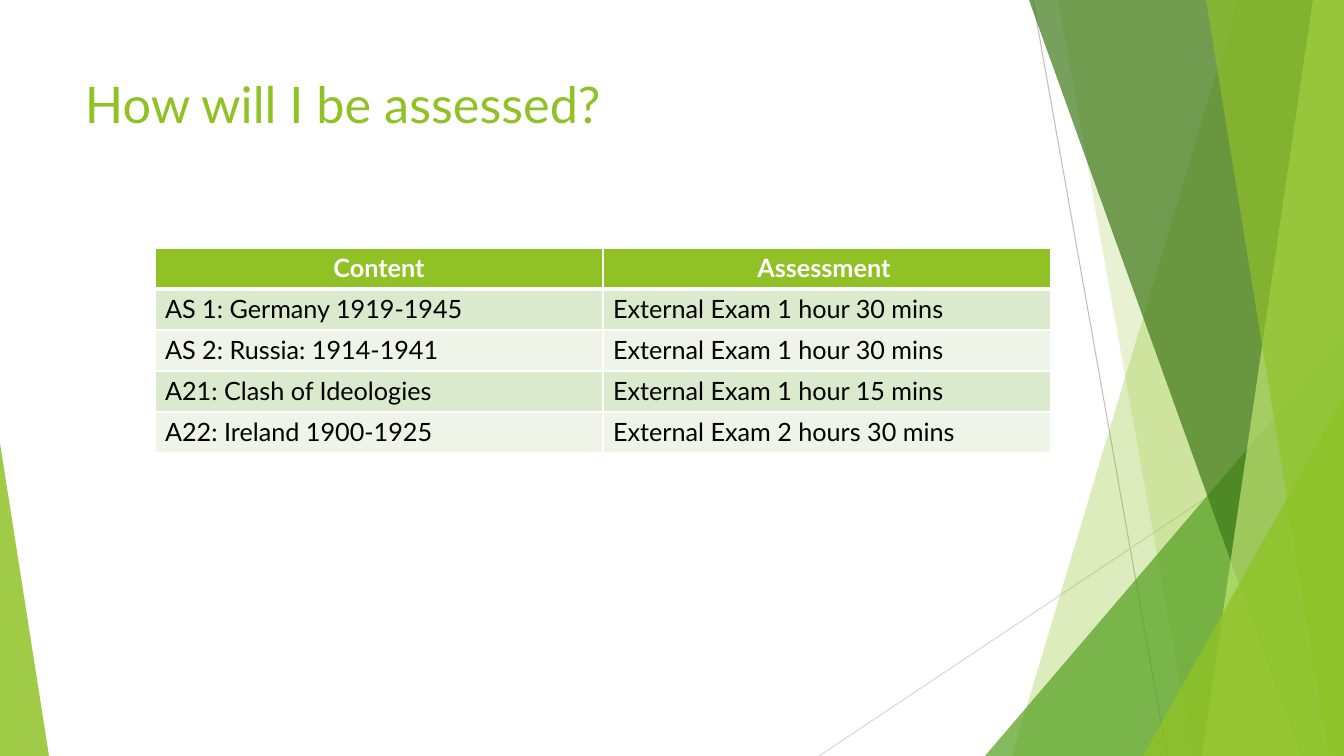
from dataclasses import dataclass

import lxml.etree
import pptx
import pptx.dml.color
import pptx.enum.shapes
import pptx.enum.text
import pptx.oxml.ns
import pptx.util

EMU_PER_PX = 914400 / 100.8
SLIDE_BOX = (0, 0, 1344, 756)


@dataclass(frozen=True)
class Theme:
    font: str = "Lato"
    title_size: int = 36
    table_size: int = 18
    lime: str = "90C226"
    pale_lime: str = "C0E474"
    green: str = "54A021"
    forest: str = "3F7819"
    white: str = "FFFFFF"
    black: str = "000000"
    steep_line: str = "BFBFBF"
    shallow_line: str = "D9D9D9"
    row_fills: tuple = ("DBE9CD", "EEF4E8")


THEME = Theme()

ASSESSMENTS = [
    ("Content", "Assessment "),
    ("AS 1: Germany 1919-1945", "External Exam 1 hour 30 mins"),
    ("AS 2: Russia: 1914-1941", "External Exam 1 hour 30 mins"),
    ("A21: Clash of Ideologies", "External Exam 1 hour 15 mins"),
    ("A22: Ireland 1900-1925", "External Exam 2 hours 30 mins"),
]


def px(length):
    return pptx.util.Emu(round(length * EMU_PER_PX))


def rgb(color):
    return pptx.dml.color.RGBColor.from_string(color)


def add_xml(parent, tag, **attributes):
    return lxml.etree.SubElement(parent, pptx.oxml.ns.qn(tag), attributes)


def style_run(run, size, color, bold=False):
    run.font.name = THEME.font
    run.font.size = pptx.util.Pt(size)
    run.font.color.rgb = rgb(color)
    run.font.bold = bold


def tint(shape, color, opacity):
    """Fill a shape with a see-through colour; opacity is in percent."""
    shape.shadow.inherit = False
    shape.line.fill.background()
    shape.fill.solid()
    shape.fill.fore_color.rgb = rgb(color)
    fill_color = shape._element.spPr.find(".//" + pptx.oxml.ns.qn("a:srgbClr"))
    add_xml(fill_color, "a:alpha", val=str(opacity * 1000))


def add_thin_line(slide, start, end, color):
    line = slide.shapes.add_connector(
        pptx.enum.shapes.MSO_CONNECTOR.STRAIGHT, *map(px, start + end))
    line.line.color.rgb = rgb(color)
    line.line.width = pptx.util.Pt(0.75)
    add_xml(line._element.spPr, "a:effectLst")


def add_band(slide, box, top_reach, bottom_reach, color, opacity):
    """Full-height band on the right edge; reaches are its widths at top and bottom."""
    left, top, width, height = box
    right, bottom = left + width, top + height
    outline = slide.shapes.build_freeform(right - top_reach, top, scale=EMU_PER_PX)
    outline.add_line_segments(
        [(right, top), (right, bottom), (right - bottom_reach, bottom)], close=True)
    tint(outline.convert_to_shape(), color, opacity)


def add_corner(slide, box, width, height, color, opacity, on_right=True):
    """Right-angled triangle in a bottom corner of the box."""
    left = box[0] + (box[2] - width if on_right else 0)
    top = box[1] + box[3] - height
    corner = slide.shapes.add_shape(
        pptx.enum.shapes.MSO_SHAPE.ISOSCELES_TRIANGLE,
        *map(px, (left, top, width, height)))
    corner.adjustments[0] = 1.0 if on_right else 0.0
    tint(corner, color, opacity)


def add_backdrop(slide, box):
    left, top, width, height = box
    right, bottom = left + width, top + height
    add_thin_line(slide, (right - 311, top), (right - 177, bottom), THEME.steep_line)
    add_thin_line(slide, (right, bottom - 350), (right - 525, bottom), THEME.shallow_line)
    add_band(slide, box, 106, 332, THEME.lime, 30)
    add_band(slide, box, 286, 151, THEME.lime, 20)
    add_corner(slide, box, 359, 420, THEME.green, 72)
    add_band(slide, box, 315, 43, THEME.forest, 70)
    add_band(slide, box, 31, 142, THEME.pale_lime, 70)
    add_band(slide, box, 138, 15, THEME.lime, 65)
    add_corner(slide, box, 201, 360, THEME.lime, 80)
    add_corner(slide, box, 49, 313, THEME.lime, 85, on_right=False)


def add_title(slide, box, wording):
    title = slide.shapes.add_textbox(*map(px, box)).text_frame
    title.word_wrap = True
    title.text = wording
    style_run(title.paragraphs[0].runs[0], THEME.title_size, THEME.lime)


def set_borders(cell, top_width, bottom_width):
    properties = cell._tc.get_or_add_tcPr()
    widths = {"a:lnL": 1, "a:lnR": 1, "a:lnT": top_width, "a:lnB": bottom_width}
    for position, (side, width) in enumerate(widths.items()):
        border = add_xml(properties, side, w=str(pptx.util.Pt(width)))
        add_xml(add_xml(border, "a:solidFill"), "a:srgbClr", val=THEME.white)
        properties.insert(position, border)


def add_assessment_table(slide, box, rows):
    table = slide.shapes.add_table(len(rows), len(rows[0]), *map(px, box)).table
    for column in table.columns:
        column.width = px(box[2] / len(rows[0]))
    for row_index, wordings in enumerate(rows):
        table.rows[row_index].height = px(box[3] / len(rows))
        header = row_index == 0
        fill = THEME.lime if header else THEME.row_fills[(row_index - 1) % 2]
        for column_index, wording in enumerate(wordings):
            cell = table.cell(row_index, column_index)
            cell.fill.solid()
            cell.fill.fore_color.rgb = rgb(fill)
            set_borders(cell, 3 if row_index == 1 else 1, 3 if header else 1)
            cell.text = wording
            paragraph = cell.text_frame.paragraphs[0]
            if header:
                paragraph.alignment = pptx.enum.text.PP_ALIGN.CENTER
            style_run(paragraph.runs[0], THEME.table_size,
                      THEME.white if header else THEME.black, bold=header)


def add_assessment_slide(deck, box):
    slide = deck.slides.add_slide(deck.slide_layouts[6])
    left, top = box[:2]
    add_backdrop(slide, box)
    add_title(slide, (left + 75, top + 68, 948, 75), "How will I be assessed?")
    add_assessment_table(slide, (left + 155, top + 248, 896, 205), ASSESSMENTS)


def main():
    deck = pptx.Presentation()
    deck.slide_width, deck.slide_height = map(px, SLIDE_BOX[2:])
    add_assessment_slide(deck, SLIDE_BOX)
    deck.save("out.pptx")


if __name__ == "__main__":
    main()
